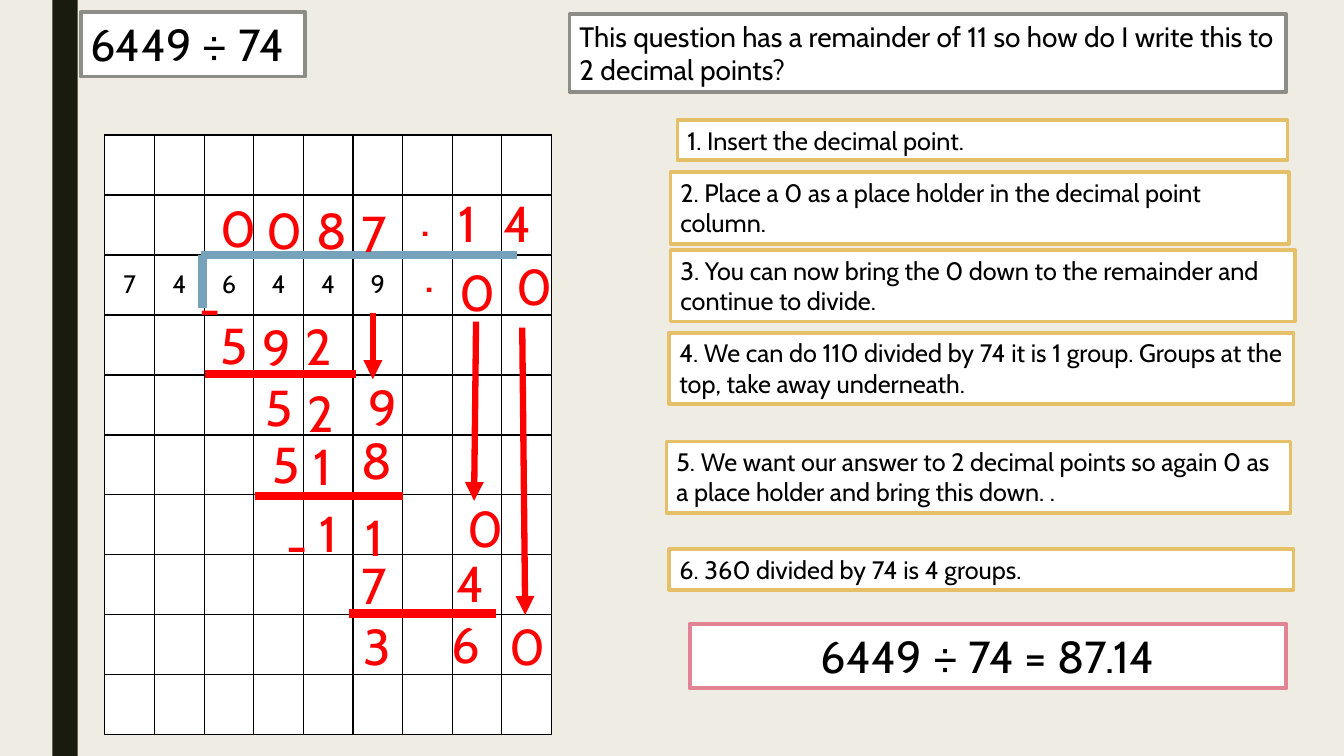
from lxml import etree
from pptx import Presentation
from pptx.dml.color import RGBColor
from pptx.enum.shapes import MSO_CONNECTOR, MSO_SHAPE
from pptx.enum.text import MSO_ANCHOR, MSO_AUTO_SIZE, PP_ALIGN
from pptx.oxml.ns import qn
from pptx.util import Inches, Pt

RECTANGLE, STRAIGHT = MSO_SHAPE.RECTANGLE, MSO_CONNECTOR.STRAIGHT
LEFT, CENTER = PP_ALIGN.LEFT, PP_ALIGN.CENTER
TOP, MIDDLE = MSO_ANCHOR.TOP, MSO_ANCHOR.MIDDLE
GROW = MSO_AUTO_SIZE.SHAPE_TO_FIT_TEXT

CREAM = RGBColor(0xEF, 0xED, 0xE3)
DARK = RGBColor(0x19, 0x1B, 0x0E)
WHITE = RGBColor(0xFF, 0xFF, 0xFF)
BLACK = RGBColor(0x00, 0x00, 0x00)
GREY = RGBColor(0x8C, 0x8D, 0x86)
GOLD = RGBColor(0xE6, 0xC0, 0x69)
PINK = RGBColor(0xE2, 0x83, 0x94)
BLUE = RGBColor(0x77, 0xA2, 0xBB)
RED = RGBColor(0xFF, 0x00, 0x00)

WIDTH, HEIGHT = Inches(13.33), Inches(7.5)
PAPER_LEFT, PAPER_TOP = Inches(1.04), Inches(1.34)
SQUARE_WIDTH, SQUARE_HEIGHT = Inches(4.43) // 9, Inches(5.95) // 10
COLUMNS, ROWS = 9, 10
SUM_ROW = 2

# Digits of the working: text, column and row on the squared paper
WORKING = [
    ("0", 2.13, 0.96), ("0", 3.05, 0.99), ("8", 4.06, 0.99), ("7", 4.98, 1.04),
    (".", 6.16, 0.77), ("1", 6.93, 0.87), ("4", 7.84, 0.87),
    (".", 6.24, 1.7), ("0", 6.95, 2.02), ("0", 8.09, 1.92),
    ("-", 1.71, 2.29), ("5", 2.13, 2.91), ("9", 2.97, 2.94), ("2", 3.84, 2.92),
    ("5", 3.03, 3.93), ("2", 3.88, 4.03), ("9", 5.12, 3.93),
    ("5", 3.17, 4.89), ("1", 4, 4.92), ("8", 4.98, 4.82),
    ("-", 3.47, 6.24), ("1", 4.12, 6.03), ("1", 5.06, 6.1), ("0", 7.11, 5.95),
    ("7", 4.98, 6.91), ("4", 6.89, 6.87),
    ("3", 5.02, 7.92), ("6", 6.79, 7.88), ("0", 7.96, 7.92),
]
BRACKET = [((1.97, 2.89), (1.97, 2)), ((1.93, 2), (8.31, 2))]
SUBTRACTIONS = [((2.01, 3.98), (5.06, 3.98)), ((3.03, 6.02), (6.01, 6.02)),
                ((4.92, 7.98), (7.88, 7.98))]
BRING_DOWNS = [((5.4, 2.96), (5.4, 4.07)), ((7.48, 3.11), (7.44, 6.1)),
               ((8.41, 3.21), (8.47, 8))]

# Steps: left, top, width and height in percent of the slide, then text
ONE_LINE, TWO_LINES = 5.33, 9.47
STEPS = [
    (50.41, 15.87, 45.39, ONE_LINE, "1. Insert the decimal point."),
    (49.89, 22.8, 45.99, TWO_LINES,
     "2. Place a 0 as a place holder in the decimal point column."),
    (49.89, 33.07, 46.44, TWO_LINES,
     "3. You can now bring the 0 down to the remainder and continue to divide."),
    (49.81, 44, 46.44, TWO_LINES,
     "4. We can do 110 divided by 74 it is 1 group. Groups at the top, take away underneath."),
    (49.59, 58.4, 46.44, TWO_LINES,
     "5. We want our answer to 2 decimal points so again 0 as a place holder and bring this down. ."),
    (49.81, 72.67, 46.44, ONE_LINE, "6. 360 divided by 74 is 4 groups."),
]


class DivisionSlide:
    font = "Cabin"
    frame_width = Pt(2.75)

    def __init__(self, deck):
        self.slide = deck.slides.add_slide(deck.slide_layouts[6])
        self.shapes = self.slide.shapes
        background = self.slide.background.fill
        background.solid()
        background.fore_color.rgb = CREAM

    def percent(self, left, top, width, height):
        return (round(WIDTH * left / 100), round(HEIGHT * top / 100),
                round(WIDTH * width / 100), round(HEIGHT * height / 100))

    def on_paper(self, column, row):
        return (round(PAPER_LEFT + column * SQUARE_WIDTH),
                round(PAPER_TOP + row * SQUARE_HEIGHT))

    def add_text(self, frame, text, size, color, align=LEFT):
        paragraph = frame.paragraphs[0]
        paragraph.alignment = align
        run = paragraph.add_run()
        run.text = text
        run.font.name = self.font
        run.font.size = Pt(size)
        run.font.color.rgb = color

    def panel(self, place, fill, frame_color=None):
        panel = self.shapes.add_shape(RECTANGLE, *self.percent(*place))
        panel.shadow.inherit = False
        panel.fill.solid()
        panel.fill.fore_color.rgb = fill
        if frame_color is None:
            panel.line.fill.background()
        else:
            panel.line.color.rgb = frame_color
            panel.line.width = self.frame_width
        return panel

    def text_panel(self, place, text, size, frame_color, align=LEFT, wrap=True):
        frame = self.panel(place, WHITE, frame_color).text_frame
        frame.word_wrap = wrap
        frame.auto_size = GROW
        frame.vertical_anchor = TOP
        self.add_text(frame, text, size, BLACK, align)

    def digit(self, text, column, row):
        box = self.shapes.add_textbox(*self.on_paper(column, row),
                                      round(1.34 * SQUARE_WIDTH), round(1.2 * SQUARE_HEIGHT))
        box.text_frame.word_wrap = True
        box.text_frame.auto_size = GROW
        self.add_text(box.text_frame, text, 36, RED)

    def rule(self, start, end, color, width, arrow=False):
        rule = self.shapes.add_connector(STRAIGHT, *self.on_paper(*start), *self.on_paper(*end))
        rule.line.color.rgb = color
        rule.line.width = Pt(width)
        properties = rule._element.spPr
        if arrow:
            etree.SubElement(properties.find(qn("a:ln")), qn("a:tailEnd"), type="triangle")
        etree.SubElement(properties, qn("a:effectLst"))

    def border(self, cell):
        properties = cell._tc.get_or_add_tcPr()
        for side in ("a:lnL", "a:lnR", "a:lnT", "a:lnB"):
            edge = etree.SubElement(properties, qn(side), w=str(Pt(1)))
            fill = etree.SubElement(edge, qn("a:solidFill"))
            etree.SubElement(fill, qn("a:srgbClr"), val=str(BLACK))

    def squared_paper(self, sum_digits):
        paper = self.shapes.add_table(ROWS, COLUMNS, PAPER_LEFT, PAPER_TOP,
                                      COLUMNS * SQUARE_WIDTH, ROWS * SQUARE_HEIGHT).table
        paper.first_row = paper.horz_banding = False
        for column in paper.columns:
            column.width = SQUARE_WIDTH
        for row in paper.rows:
            row.height = SQUARE_HEIGHT
        for square in paper.iter_cells():
            self.border(square)
            square.fill.solid()
            square.fill.fore_color.rgb = WHITE
        for column, digit in enumerate(sum_digits):
            square = paper.cell(SUM_ROW, column)
            square.vertical_anchor = MIDDLE
            self.add_text(square.text_frame, digit, 18, BLACK, CENTER)


def main():
    deck = Presentation()
    deck.slide_width, deck.slide_height = WIDTH, HEIGHT
    lesson = DivisionSlide(deck)

    lesson.panel((3.9, 0, 1.88, 100), DARK)
    lesson.text_panel((6, 1.6, 16.73, 8.53), "6449 ÷ 74", 32, GREY, wrap=False)
    lesson.squared_paper("746449")
    for start, end in BRACKET:
        lesson.rule(start, end, BLUE, 6)
    for text, column, row in WORKING:
        lesson.digit(text, column, row)
    for start, end in SUBTRACTIONS:
        lesson.rule(start, end, RED, 6)
    for start, end in BRING_DOWNS:
        lesson.rule(start, end, RED, 4.5, arrow=True)

    lesson.text_panel(
        (42.38, 1.87, 53.34, 10.27),
        "This question has a remainder of 11 so how do I write this to 2 decimal points?",
        20, GREY)
    for *place, text in STEPS:
        lesson.text_panel(place, text, 18, GOLD)
    lesson.text_panel((51.31, 82.53, 44.41, 8.53), "6449 ÷ 74 = 87.14", 32, PINK, CENTER)
    deck.save("out.pptx")


if __name__ == "__main__":
    main()
